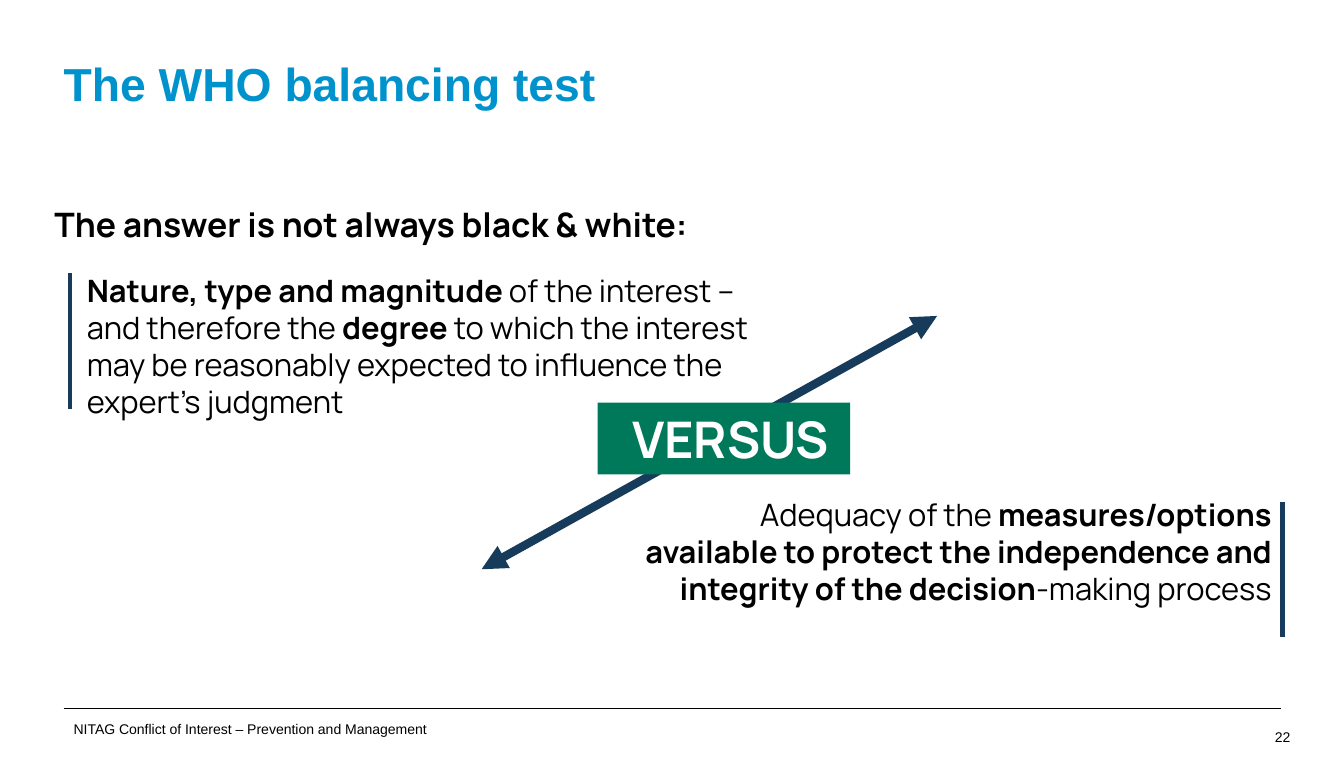
"""Build the slide on the WHO balancing test."""
from dataclasses import dataclass

from lxml.etree import SubElement
from pptx import Presentation
from pptx.dml.color import RGBColor as RGB
from pptx.enum.shapes import MSO_CONNECTOR as Link, MSO_SHAPE as Shape
from pptx.enum.text import MSO_ANCHOR as Anchor, MSO_AUTO_SIZE as Fit, PP_ALIGN as Align
from pptx.oxml.ns import qn
from pptx.util import Pt


@dataclass(frozen=True)
class Theme:
    black: RGB = RGB(0, 0, 0)
    white: RGB = RGB(255, 255, 255)
    blue: RGB = RGB(0, 0x92, 0xCC)
    navy: RGB = RGB(0x17, 0x3C, 0x5B)
    green: RGB = RGB(0, 0x78, 0x5A)
    heading_font: str = "Arial"
    body_font: str = "Manrope"
    title: float = 33
    versus: float = 36
    lead: float = 24
    body: float = 22
    small: float = 10


def apply(target, values):
    for name, value in values.items():
        setattr(target, name, value)


class SlideBuilder:
    def __init__(self, slide, theme):
        self.slide = slide
        self.theme = theme

    def fill_text(self, shape, runs, size, color=None, font=None, insets=(7.2, 3.6, 7.2, 3.6),
                  anchor=Anchor.TOP, **paragraph_format):
        frame = shape.text_frame
        sides = ("margin_left", "margin_top", "margin_right", "margin_bottom")
        apply(frame, {"word_wrap": True, "auto_size": Fit.NONE, "vertical_anchor": anchor,
                      **{side: Pt(inset) for side, inset in zip(sides, insets)}})
        paragraph = frame.paragraphs[0]
        apply(paragraph, {"alignment": Align.LEFT, **paragraph_format})
        for words, bold in runs:
            run = paragraph.add_run()
            run.text = words
            apply(run.font, {"name": font or self.theme.body_font, "size": Pt(size), "bold": bold})
            run.font.color.rgb = color or self.theme.black

    def title(self, box, words):
        heading = self.slide.shapes.title
        apply(heading, dict(zip(("left", "top", "width", "height"), map(Pt, box))))
        self.fill_text(heading, [(words, True)], self.theme.title, self.theme.blue,
                       self.theme.heading_font, (0, 0.7, 0, 0), line_spacing=0.9)

    def text(self, box, runs, size, **style):
        self.fill_text(self.slide.shapes.add_textbox(*map(Pt, box)), runs, size, **style)

    def banner(self, box, words):
        banner = self.slide.shapes.add_shape(Shape.RECTANGLE, *map(Pt, box))
        banner.shadow.inherit = False
        banner.fill.solid()
        banner.fill.fore_color.rgb = self.theme.green
        banner.line.fill.background()
        self.fill_text(banner, [(words, True)], self.theme.versus, self.theme.white,
                       insets=(24.5, 3.6, 7.2, 3.6), anchor=Anchor.MIDDLE)

    def line(self, start, end, width, color, arrows=()):
        connector = self.slide.shapes.add_connector(Link.STRAIGHT, *map(Pt, (*start, *end)))
        connector.line.width = Pt(width)
        connector.line.color.rgb = color
        properties = connector._element.spPr
        for arrow in arrows:
            SubElement(properties.find(qn("a:ln")), qn(f"a:{arrow}"), type="triangle")
        SubElement(properties, qn("a:effectLst"))


def main():
    theme = Theme()
    deck = Presentation()
    apply(deck, {"slide_width": Pt(958.32), "slide_height": Pt(541.44)})
    builder = SlideBuilder(deck.slides.add_slide(deck.slide_layouts[5]), theme)

    builder.title((45.4, 43.2, 865.4, 36.7), "The WHO balancing test")
    builder.text((37.4, 142.6, 882.7, 36.7),
                 [("The answer is not always black & white:", True)], theme.lead,
                 insets=(1.4, 0, 1.4, 0), line_spacing=1.1, space_after=Pt(7.1))
    builder.text((897.1, 519.8, 23, 14.4), [("22", False)], theme.small,
                 font=theme.heading_font, insets=(0, 0, 0, 0), alignment=Align.RIGHT)
    builder.text((45.4, 510.5, 595.4, 19),
                 [("NITAG Conflict of Interest – Prevention and Management", False)],
                 theme.small, font=theme.heading_font)
    builder.line((45.4, 505.4), (913.4, 505.4), 0.75, theme.black)

    builder.text((37.4, 190.1, 526.3, 113.8), [
        ("Nature, type and magnitude ", True),
        ("of the interest – and therefore the ", False),
        ("degree ", True),
        ("to which the interest may be reasonably expected to influence the "
         "expert's judgment", False),
    ], theme.body, insets=(24.5, 3.6, 7.2, 3.6))
    builder.text((434.2, 349.9, 479.5, 113.8), [
        ("Adequacy of the ", False),
        ("measures/options available to protect the independence and "
         "integrity of the decision", True),
        ("-making process", False),
    ], theme.body, insets=(24.5, 3.6, 7.2, 3.6), alignment=Align.RIGHT)

    builder.line((343.4, 406.1), (668.2, 225.4), 6, theme.navy, ("headEnd", "tailEnd"))
    builder.banner((426.2, 287.3, 180, 51.1), "VERSUS")
    for x, top in ((49.7, 195.1), (914.4, 357.8)):
        builder.line((x, top), (x, top + 96.8), 3, theme.navy)

    deck.save("out.pptx")


if __name__ == "__main__":
    main()
